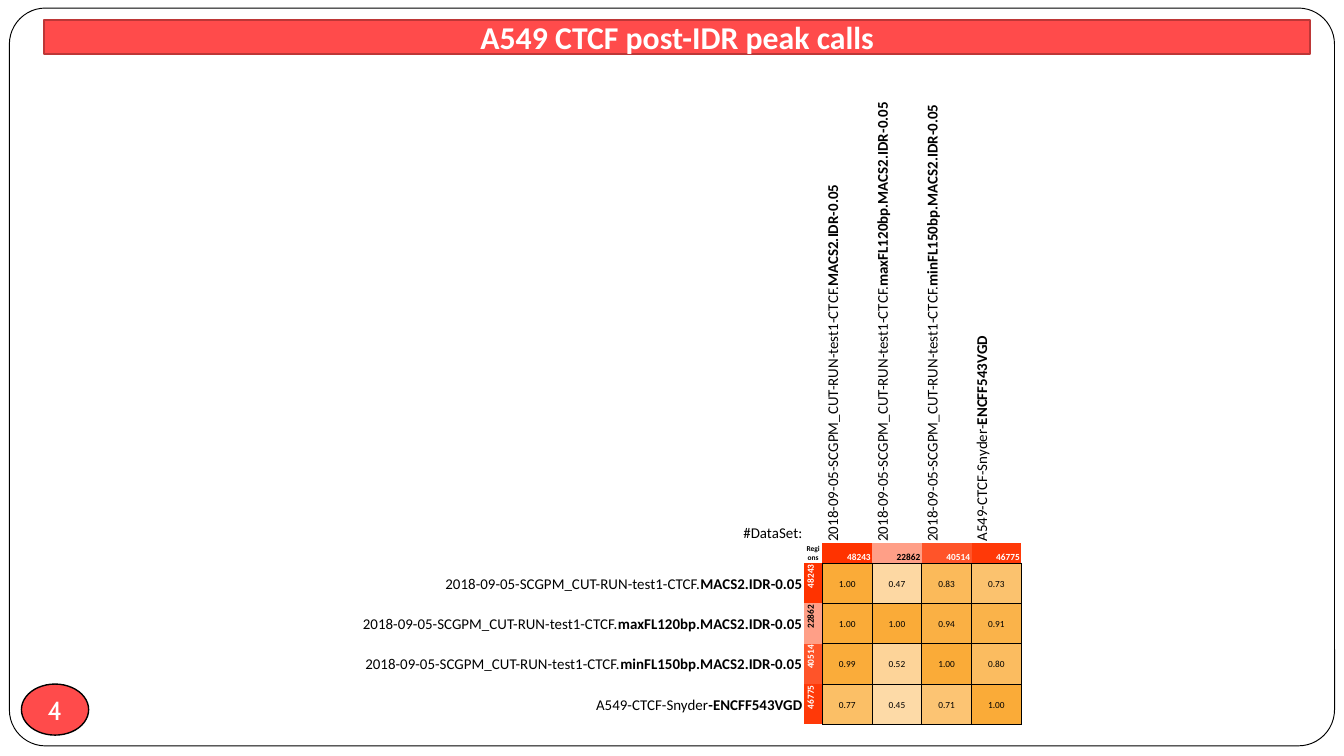
from pptx import Presentation
from pptx.dml.color import RGBColor
from pptx.enum.shapes import MSO_SHAPE as SHAPE
from pptx.enum.text import MSO_ANCHOR as ANCHOR, MSO_AUTO_SIZE as AUTO, PP_ALIGN as ALIGN
from pptx.oxml import parse_xml
from pptx.oxml.ns import nsdecls
from pptx.util import Inches, Pt

COLORS = {
    "white": "FFFFFF", "black": "000000", "red": "FF4B4B", "red_edge": "BD3737",
    "most_regions": "FF3300", "fewest_regions": "FF9F87",
    "full_overlap": "FAAB38", "least_overlap": "FDDAA7",
}
NO_GRID_STYLE = "{2D5ABB26-0587-4C30-8999-92F81FD0307C}"
RUN = "2018-09-05-SCGPM_CUT-RUN-test1-CTCF."
RUN_LABELS = [(RUN, f"{kind}MACS2.IDR-0.05") for kind in ("", "maxFL120bp.", "minFL150bp.")]
COLUMN_LABELS = RUN_LABELS + [("A549-CTCF-Snyder-", "ENCFF543VGD")]
ROW_LABELS = RUN_LABELS + [("A549-CTCF-Snyder", "-ENCFF543VGD")]
REGIONS = [48243, 22862, 40514, 46775]
OVERLAPS = [
    [1.00, 0.47, 0.83, 0.73],
    [1.00, 1.00, 0.94, 0.91],
    [0.99, 0.52, 1.00, 0.80],
    [0.77, 0.45, 0.71, 1.00],
]


def rgb(name):
    return RGBColor.from_string(COLORS[name])


def blend(value, low, high, low_name, high_name):
    share = (value - low) / (high - low)
    return RGBColor(*(round(a + (b - a) * share) for a, b in zip(rgb(low_name), rgb(high_name))))


def add_text(paragraph, text, color="black", **font_values):
    run = paragraph.add_run()
    run.text = text
    for name, value in font_values.items():
        setattr(run.font, name, value)
    run.font.color.rgb = rgb(color)


def paint(shape, fill, edge, width):
    shape.fill.solid()
    shape.fill.fore_color.rgb = rgb(fill)
    shape.line.color.rgb = rgb(edge)
    shape.line.width = Pt(width)


def add_panel(slide, kind, box, fill, edge, width):
    panel = slide.shapes.add_shape(kind, *map(Inches, box))
    panel.shadow.inherit = False
    paint(panel, fill, edge, width)
    return panel


def add_frame(slide, box):
    frame = add_panel(slide, SHAPE.ROUNDED_RECTANGLE, box, "white", "black", 0.5)
    frame.adjustments[0] = 0.049


def add_page_badge(slide, box, number):
    badge = add_panel(slide, SHAPE.OVAL, box, "red", "black", 0.75)
    frame = badge.text_frame
    layout = {"margin_left": 0, "margin_right": 0, "margin_top": 0, "margin_bottom": 0,
              "word_wrap": False, "vertical_anchor": ANCHOR.MIDDLE}
    for name, value in layout.items():
        setattr(frame, name, value)
    frame.paragraphs[0].alignment = ALIGN.CENTER
    add_text(frame.paragraphs[0], number, "white", size=Pt(14), name="Cabin")


def add_title_bar(slide, box, text):
    title = slide.shapes.title
    for name, value in zip(("left", "top", "width", "height"), box):
        setattr(title, name, Inches(value))
    title._element.spPr.insert(1, parse_xml(
        f'<a:prstGeom {nsdecls("a")} prst="roundRect"><a:avLst/></a:prstGeom>'))
    paint(title, "red", "red_edge", 1)
    slide.shapes._spTree.append(title._element)
    frame = title.text_frame
    layout = {"auto_size": AUTO.NONE, "word_wrap": True, "vertical_anchor": ANCHOR.MIDDLE}
    for name, value in layout.items():
        setattr(frame, name, value)
    frame.paragraphs[0].alignment = ALIGN.CENTER
    add_text(frame.paragraphs[0], text, "white", size=Pt(17), name="Calibri", bold=True)


def fill_cell(cell, parts=(), size=5, align=ALIGN.LEFT, anchor=ANCHOR.MIDDLE,
              color="black", fill=None, edges="", upright=False):
    layout = {"margin_left": Inches(0.01), "margin_right": Inches(0.01),
              "margin_top": Inches(0.01), "margin_bottom": 0, "vertical_anchor": anchor}
    for name, value in layout.items():
        setattr(cell, name, value)
    properties = cell._tc.get_or_add_tcPr()
    if upright:
        properties.set("vert", "vert270")
    for edge in edges:
        properties.append(parse_xml(
            f'<a:ln{edge} {nsdecls("a")} w="{Pt(0.5)}"><a:solidFill>'
            f'<a:srgbClr val="{COLORS["black"]}"/></a:solidFill></a:ln{edge}>'))
    if fill is None:
        cell.fill.background()
    else:
        cell.fill.solid()
        cell.fill.fore_color.rgb = fill
    paragraph = cell.text_frame.paragraphs[0]
    paragraph.alignment = align
    for text, bold in parts:
        add_text(paragraph, text, color, size=Pt(size), name="Calibri", bold=bold)
    if not parts:
        paragraph._p.append(parse_xml(f'<a:endParaRPr {nsdecls("a")} sz="{size * 100}"/>'))


def add_overlap_table(slide, box):
    count = len(REGIONS)
    table_frame = slide.shapes.add_table(count + 2, count + 2, *map(Inches, box))
    table = table_frame.table
    table.first_row = table.horz_banding = False
    table._tbl.tblPr[0].text = NO_GRID_STYLE
    for column, width in zip(table.columns, [3.31, 0.14] + [0.37] * count):
        column.width = Inches(width)
    for row, height in zip(table.rows, [3.55, 0.15] + [0.3] * count):
        row.height = Inches(height)

    fill_cell(table.cell(0, 0), [("#DataSet:", False)], 8, ALIGN.RIGHT, ANCHOR.BOTTOM)
    fill_cell(table.cell(0, 1))
    fill_cell(table.cell(1, 0))
    fill_cell(table.cell(1, 1), [("Regions", True)], 4, ALIGN.CENTER)

    fewest, most = min(REGIONS), max(REGIONS)
    lowest = min(map(min, OVERLAPS))
    for i, regions in enumerate(REGIONS):
        place = i + 2
        column_label = list(zip(COLUMN_LABELS[i], (False, True)))
        row_label = list(zip(ROW_LABELS[i], (False, True)))
        fill_cell(table.cell(0, place), column_label, 8, anchor=ANCHOR.BOTTOM, upright=True)
        fill_cell(table.cell(place, 0), row_label, 8, ALIGN.RIGHT)
        region_format = {
            "parts": [(str(regions), True)], "align": ALIGN.RIGHT, "anchor": ANCHOR.BOTTOM,
            "color": "black" if regions == fewest else "white",
            "fill": blend(regions, fewest, most, "fewest_regions", "most_regions"),
        }
        fill_cell(table.cell(1, place), edges="B", **region_format)
        fill_cell(table.cell(place, 1), edges="R", upright=True, **region_format)
        for j, overlap in enumerate(OVERLAPS[i]):
            shade = blend(overlap, lowest, 1, "least_overlap", "full_overlap")
            fill_cell(table.cell(place, j + 2), [(f"{overlap:.2f}", False)],
                      align=ALIGN.CENTER, fill=shade, edges="LRTB")


def main():
    deck = Presentation()
    deck.slide_width = Inches(10)
    deck.slide_height = deck.slide_width * 9 // 16
    slide = deck.slides.add_slide(deck.slide_layouts[5])
    add_frame(slide, (0.07, 0.06, 9.86, 5.49))
    add_page_badge(slide, (0.16, 5.09, 0.5, 0.38), "4")
    add_title_bar(slide, (0.33, 0.15, 9.42, 0.25), "A549 CTCF post-IDR peak calls")
    add_overlap_table(slide, (2.67, 0.49, 4.93, 4.9))
    deck.save("out.pptx")


if __name__ == "__main__":
    main()
